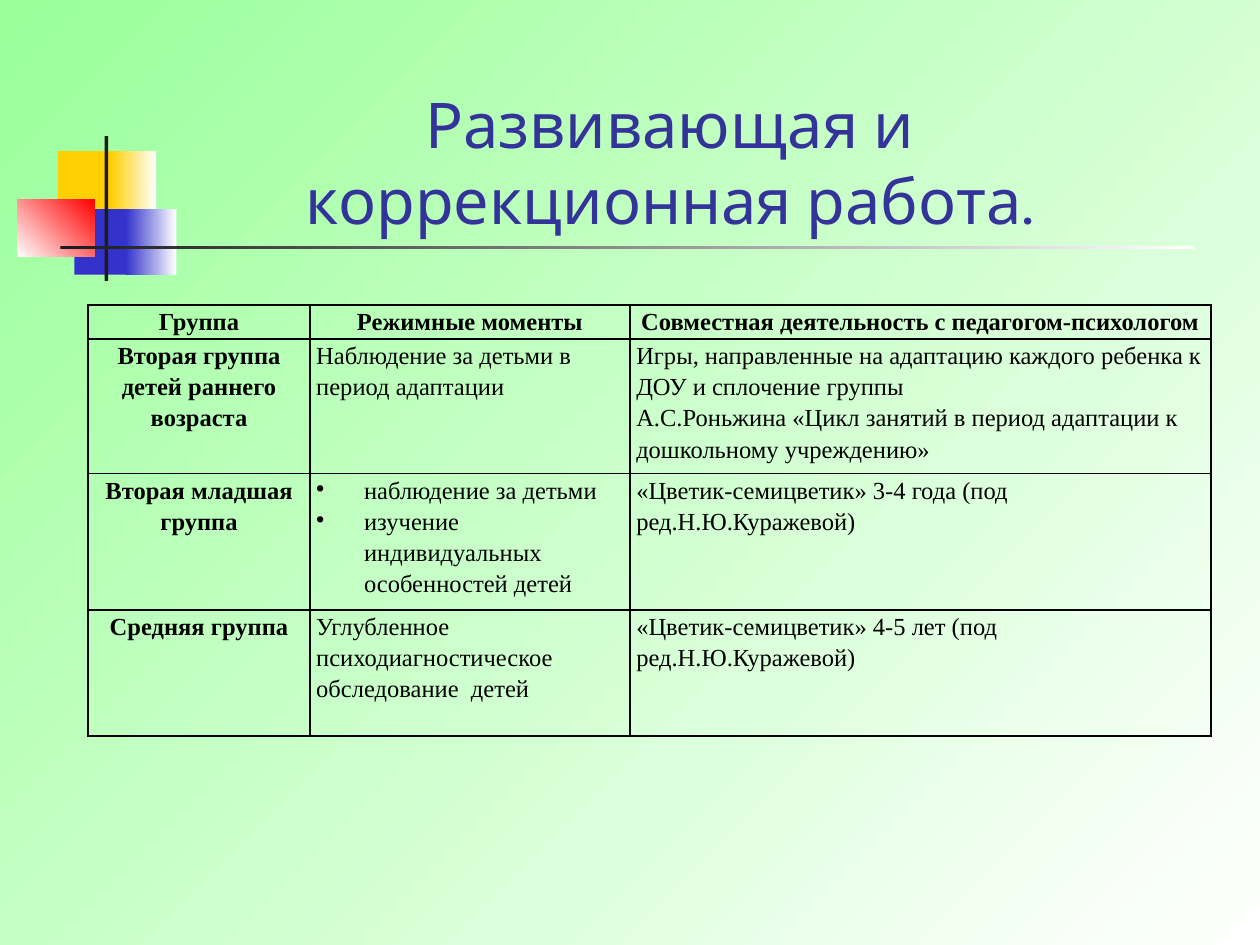
from lxml import etree
from pptx import Presentation
from pptx import util as u
from pptx.dml.color import RGBColor
from pptx.enum import shapes, text
from pptx.oxml.ns import qn

# Ornament bars: left, top, width, height, colours, clockwise angle
BARS = [
    (0.46, 1.2, 0.48, 0.52, ["FFCF01"], 0),
    (0.88, 1.2, 0.36, 0.52, ["FFCF01", "FFFFFF"], 0),
    (0.59, 1.66, 0.46, 0.52, ["3333CC"], 0),
    (1, 1.66, 0.4, 0.52, ["3333CC", "FFFFFF"], 0),
    (0.14, 1.58, 0.61, 0.46, ["FFFFFF", "FF0000"], 315),
    (0.83, 1.08, 0.03, 1.15, ["1C1C1C"], 0),
    (0.48, 1.95, 9, 0.03, ["1C1C1C", "FFFFFF"], 0),
]

# Each cell is a list of paragraphs; the first row and column are heads
COLS = [1.76, 2.54, 4.61]
ROWS = [0.27, 1.07, 1.08, 1]
CELLS = [
    [["Группа"], ["Режимные моменты"],
     ["Совместная деятельность с педагогом-психологом"]],
    [["Вторая группа детей раннего возраста"],
     ["Наблюдение за детьми в период адаптации"],
     ["Игры, направленные на адаптацию каждого ребенка к ДОУ и сплочение группы",
      "А.С.Роньжина «Цикл занятий в период адаптации к дошкольному учреждению»"]],
    [["Вторая младшая группа"],
     ["наблюдение за детьми", "изучение индивидуальных особенностей детей"],
     ["«Цветик-семицветик» 3-4 года (под ред.Н.Ю.Куражевой)"]],
    [["Средняя группа"],
     ["Углубленное психодиагностическое обследование  детей"],
     ["«Цветик-семицветик» 4-5 лет (под ред.Н.Ю.Куражевой)"]],
]
LISTS = {(2, 1)}


def color(code):
    return RGBColor.from_string(code)


def paint(fill, codes, angle=0):
    """Fill with one colour, or fade between two."""
    if len(codes) == 1:
        fill.solid()
        fill.fore_color.rgb = color(codes[0])
        return
    fill.gradient()
    fill.gradient_angle = -angle % 360
    for stop, code, pos in zip(fill.gradient_stops, codes, (0, 1)):
        stop.color.rgb = color(code)
        stop.position = pos


def style(para, font, size, code, bold=False):
    for run in para.runs:
        run.font.name = font
        run.font.size = u.Pt(size)
        run.font.bold = bold
        run.font.color.rgb = color(code)


def add_bar(slide, left, top, width, height, codes, angle):
    box = [u.Inches(n) for n in (left, top, width, height)]
    bar = slide.shapes.add_shape(shapes.MSO_SHAPE.RECTANGLE, *box)
    bar.shadow.inherit = False
    bar.line.fill.background()
    paint(bar.fill, codes, angle)


def set_title(slide, words):
    title = slide.shapes.title
    title.left, title.top = u.Inches(1.33), u.Inches(0.62)
    title.width, title.height = u.Inches(7.97), u.Inches(1.31)
    frame = title.text_frame
    frame.text = words
    frame.word_wrap = True
    frame.auto_size = text.MSO_AUTO_SIZE.NONE
    frame.vertical_anchor = text.MSO_ANCHOR.BOTTOM
    para = frame.paragraphs[0]
    para.alignment = text.PP_ALIGN.CENTER
    style(para, "Karla", 36, "333399")


def add_edges(cell):
    props = cell._tc.get_or_add_tcPr()
    for spot, side in enumerate(("lnL", "lnR", "lnT", "lnB")):
        edge = etree.Element(qn("a:" + side), w=str(u.Pt(1)))
        fill = etree.SubElement(edge, qn("a:solidFill"))
        etree.SubElement(fill, qn("a:srgbClr"), val="000000")
        props.insert(spot, edge)


def add_bullet(para):
    props = para._p.get_or_add_pPr()
    props.set("marL", str(u.Inches(0.38)))
    props.set("indent", str(u.Inches(-0.38)))
    etree.SubElement(props, qn("a:buChar"), char="•")


def fill_cell(cell, paras, head, listed):
    cell.fill.background()
    add_edges(cell)
    cell.margin_left = cell.margin_right = u.Inches(0.05)
    cell.margin_top = cell.margin_bottom = 0
    cell.text_frame.text = "\n".join(paras)
    for para in cell.text_frame.paragraphs:
        para.line_spacing = 1.15
        para.alignment = text.PP_ALIGN.CENTER if head else text.PP_ALIGN.LEFT
        style(para, "Times New Roman", 14, "000000", head)
        if listed:
            add_bullet(para)


def add_grid(slide):
    box = [u.Inches(n) for n in (0.7, 2.42, sum(COLS), sum(ROWS))]
    grid = slide.shapes.add_table(len(ROWS), len(COLS), *box).table
    grid.first_row = grid.horz_banding = False
    for col, width in zip(grid.columns, COLS):
        col.width = u.Inches(width)
    for row, height in zip(grid.rows, ROWS):
        row.height = u.Inches(height)
    for r, line in enumerate(CELLS):
        for c, paras in enumerate(line):
            fill_cell(grid.cell(r, c), paras, r == 0 or c == 0, (r, c) in LISTS)


def main():
    deck = Presentation()
    deck.slide_width, deck.slide_height = u.Inches(10), u.Inches(7.5)
    slide = deck.slides.add_slide(deck.slide_layouts[5])
    # Backdrop and ornament
    paint(slide.background.fill, ["99FF99", "FFFFFF"], 45)
    for bar in BARS:
        add_bar(slide, *bar)
    # Content
    set_title(slide, "Развивающая и коррекционная работа.")
    add_grid(slide)
    deck.save("out.pptx")


if __name__ == "__main__":
    main()
